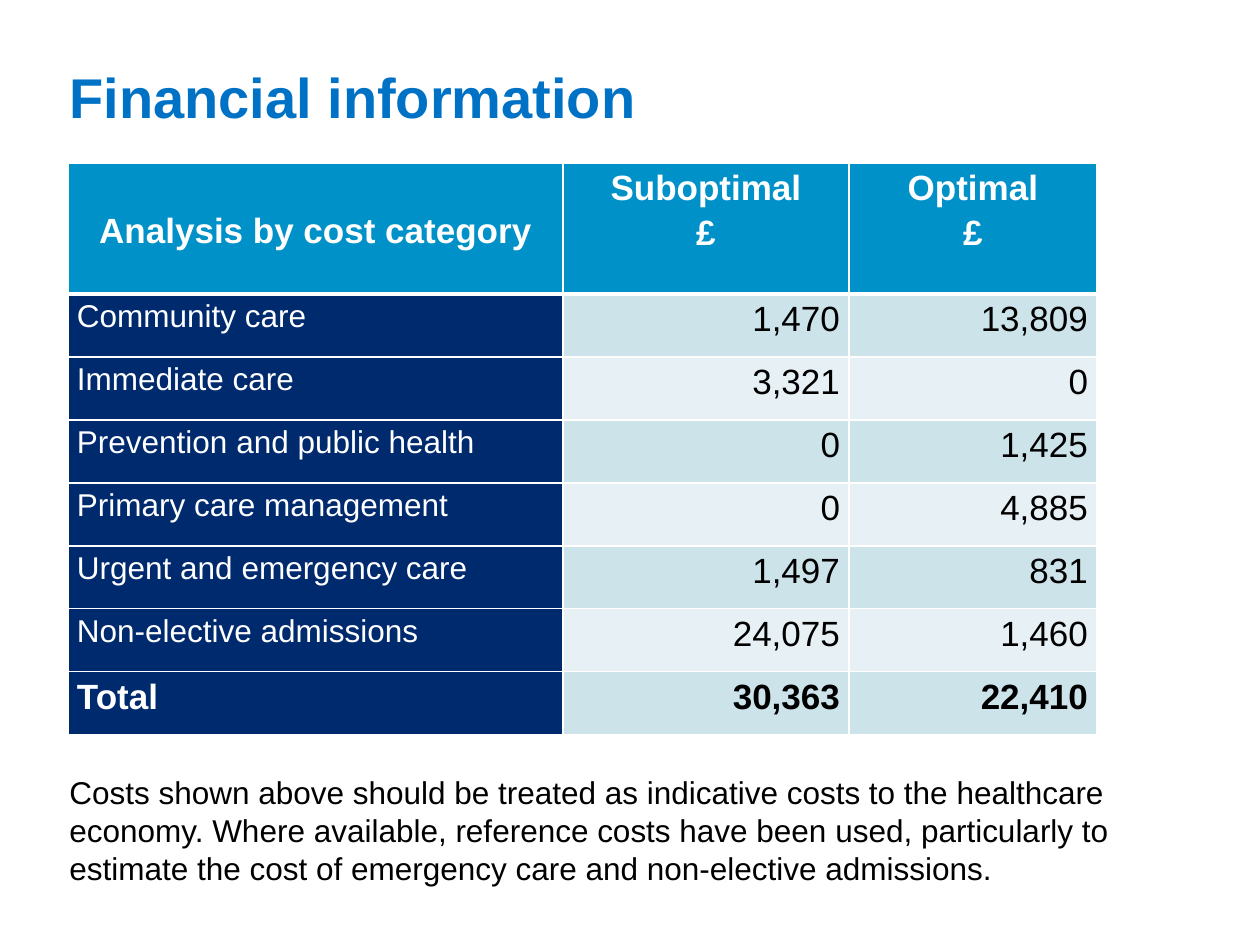
from lxml.etree import SubElement
from pptx import Presentation
from pptx.dml.color import RGBColor
from pptx.enum.text import MSO_ANCHOR as Anchor, MSO_AUTO_SIZE as Fit, PP_ALIGN as Align
from pptx.oxml.ns import qn
from pptx.util import Pt

PX = 914400 // 126
BLUE, CYAN, NAVY = "0072C6", "0091C9", "002A6E"
BANDS = ("CCE3EA", "E7F1F5")
WHITE, BLACK = "FFFFFF", "000000"

HEADER = ("Analysis by cost category", "Suboptimal\n£", "Optimal\n£")
COSTS = (
    ("Community care", "1,470", "13,809"),
    ("Immediate care", "3,321", "0"),
    ("Prevention and public health", "0", "1,425"),
    ("Primary care management", "0", "4,885"),
    ("Urgent and emergency care", "1,497", "831"),
    ("Non-elective admissions", "24,075", "1,460"),
    ("Total", "30,363", "22,410"),
)
NOTE = (
    "Costs shown above should be treated as indicative costs to the healthcare "
    "economy. Where available, reference costs have been used, particularly to "
    "estimate the cost of emergency care and non-elective admissions."
)


def px(n):
    """Turn whole pixels into EMU."""
    return n * PX


def rgb(value):
    """Turn a hex string into a colour."""
    return RGBColor.from_string(value)


def write(tf, text, size=18, color=BLACK, bold=False, align=Align.LEFT, spacing=None):
    """Fill a text frame with one paragraph per line of text."""
    for i, line in enumerate(text.split("\n")):
        p = tf.add_paragraph() if i else tf.paragraphs[0]
        p.alignment = align
        p.line_spacing = spacing
        r = p.add_run()
        r.text = line
        r.font.name = "Arial"
        r.font.size = Pt(size)
        r.font.bold = bold
        r.font.color.rgb = rgb(color)


def border(cell, **widths):
    """Draw white cell edges, each with its width in points."""
    tc_pr = cell._tc.get_or_add_tcPr()
    for side, width in widths.items():
        ln = SubElement(tc_pr, qn(f"a:ln{side}"), w=str(Pt(width)))
        fill = SubElement(ln, qn("a:solidFill"))
        SubElement(fill, qn("a:srgbClr"), val=WHITE)


class Deck:
    """Holds the style and the current slide."""

    def __init__(self, width, height):
        """Start a presentation with one title-only slide."""
        self.prs = Presentation()
        self.prs.slide_width, self.prs.slide_height = px(width), px(height)
        self.s = self.prs.slides.add_slide(self.prs.slide_layouts[5])

    def title(self, text, x, y, w, h):
        """Place and format the title placeholder."""
        sp = self.s.shapes.title
        sp.left, sp.top, sp.width, sp.height = map(px, (x, y, w, h))
        tf = sp.text_frame
        tf.auto_size = Fit.NONE
        tf.vertical_anchor = Anchor.MIDDLE
        write(tf, text, size=32, color=BLUE, bold=True)

    def note(self, text, x, y, w, h):
        """Add a wrapped text box."""
        tf = self.s.shapes.add_textbox(*map(px, (x, y, w, h))).text_frame
        tf.word_wrap = True
        write(tf, text)

    def cell(self, cell, text, fill, top=1, bottom=1, anchor=Anchor.TOP, **fmt):
        """Format and fill one table cell."""
        cell.margin_left = cell.margin_right = px(9)
        cell.margin_top = cell.margin_bottom = 0
        cell.vertical_anchor = anchor
        border(cell, L=1, R=1, T=top, B=bottom)
        cell.fill.solid()
        cell.fill.fore_color.rgb = rgb(fill)
        write(cell.text_frame, text, spacing=1.15, **fmt)

    def table(self, header, rows, x, y, widths, head_h, row_h):
        """Add a cost table with a header row, banded values and a bold last row."""
        n = len(rows)
        table = self.s.shapes.add_table(
            n + 1, len(widths), px(x), px(y), px(sum(widths)), px(head_h + n * row_h)
        ).table
        table.first_row = table.horz_banding = False
        for column, width in zip(table.columns, widths):
            column.width = px(width)
        for i, row in enumerate(table.rows):
            row.height = px(row_h if i else head_h)
        for j, text in enumerate(header):
            self.cell(table.cell(0, j), text, CYAN, bottom=3, size=20, color=WHITE,
                      bold=True, align=Align.CENTER,
                      anchor=Anchor.TOP if j else Anchor.MIDDLE)
        for i, (label, *values) in enumerate(rows):
            total = i == n - 1
            top = 1 if i else 3
            self.cell(table.cell(i + 1, 0), label, NAVY, top=top, color=WHITE,
                      size=20 if total else 18, bold=total)
            for j, value in enumerate(values, 1):
                self.cell(table.cell(i + 1, j), value, BANDS[i % 2], top=top,
                          size=20, bold=total, align=Align.RIGHT)


def main():
    """Build the financial information slide."""
    deck = Deck(1260, 945)
    deck.title("Financial information", 57, 50, 1014, 92)
    deck.note(NOTE, 57, 767, 1103, 127)
    deck.table(HEADER, COSTS, 68, 163, (495, 286, 248), 131, 63)
    deck.prs.save("out.pptx")


if __name__ == "__main__":
    main()
